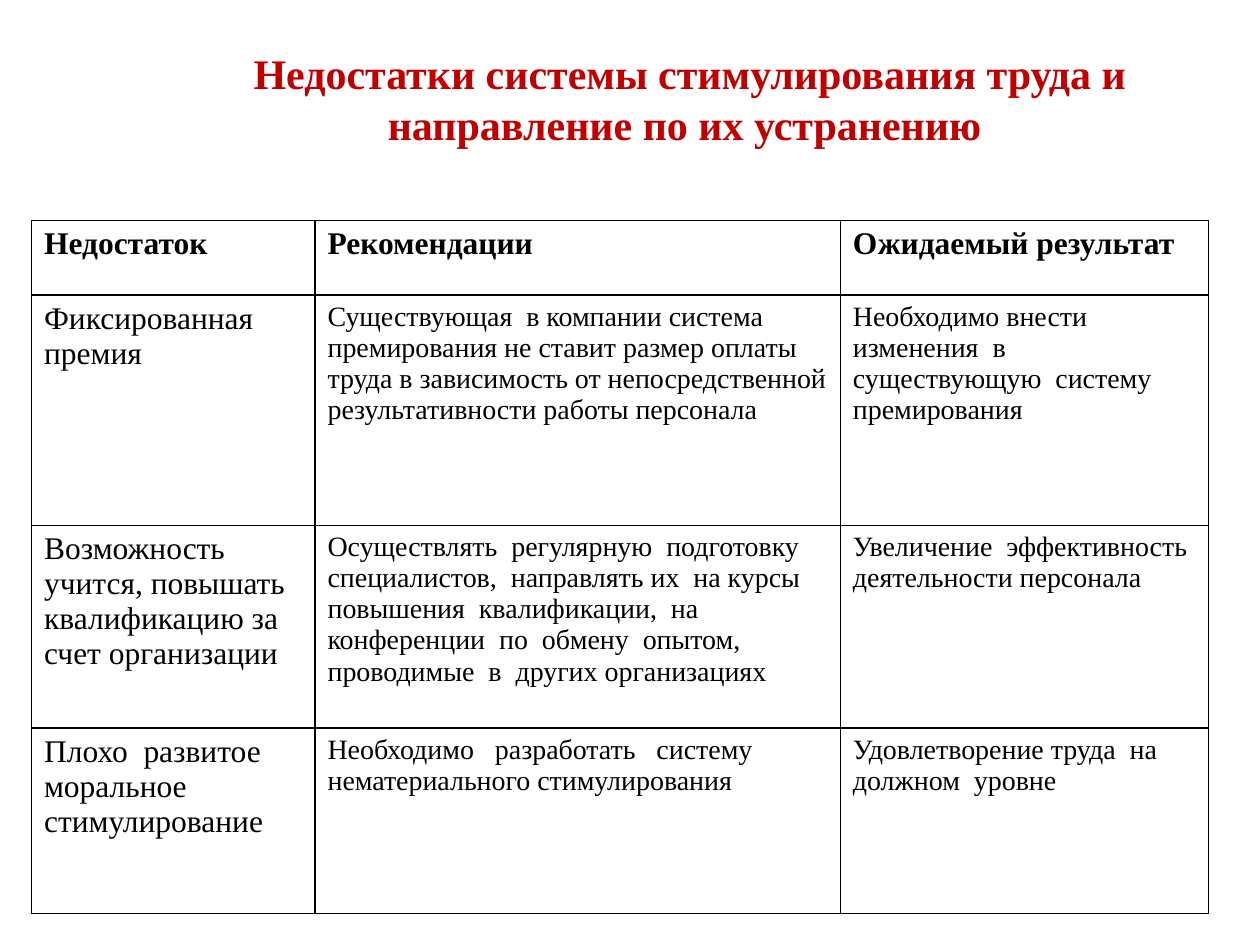
from lxml.etree import SubElement
from pptx import Presentation
from pptx.dml.color import RGBColor
from pptx.enum.text import PP_ALIGN
from pptx.oxml.ns import qn
from pptx.util import Inches, Pt

COLORS = {"title": "C00000", "text": "000000", "border": "000000"}

TITLE = ["Недостатки системы стимулирования труда и ",
         "направление по их устранению "]
COLUMN_WIDTHS = [2.25, 4.17, 2.92]
ROW_HEIGHTS = [0.59, 1.83, 1.61, 1.47]
ROWS = [
    ["Недостаток", "Рекомендации", "Ожидаемый результат"],
    ["Фиксированная премия",
     "Существующая  в компании система премирования не ставит размер оплаты "
     "труда в зависимость от непосредственной результативности работы персонала",
     "Необходимо внести  изменения  в  существующую  систему  премирования"],
    ["Возможность учится, повышать квалификацию за счет организации",
     "Осуществлять  регулярную  подготовку  специалистов,  направлять их  на курсы  "
     "повышения  квалификации,  на  конференции  по  обмену  опытом, "
     "проводимые  в  других организациях",
     "Увеличение  эффективность деятельности персонала"],
    ["Плохо  развитое  моральное  стимулирование",
     "Необходимо   разработать   систему   нематериального стимулирования",
     "Удовлетворение труда  на должном  уровне"],
]


class SlideBuilder:
    """Holds the text style and the current slide."""

    font_name = "Times New Roman"
    border_width = Pt(0.96)

    def __init__(self, slide):
        self.slide = slide

    def add_text(self, p, text, size, color, bold=False):
        r = p.add_run()
        r.text = text
        style = {"name": self.font_name, "size": Pt(size), "bold": bold}
        for key, value in style.items():
            setattr(r.font, key, value)
        r.font.color.rgb = RGBColor.from_string(COLORS[color])

    def title(self, lines, left, top, width, height):
        box = self.slide.shapes.add_textbox(
            Inches(left), Inches(top), Inches(width), Inches(height))
        tf = box.text_frame
        tf.word_wrap = False
        for i, line in enumerate(lines):
            p = tf.add_paragraph() if i else tf.paragraphs[0]
            p.alignment = PP_ALIGN.CENTER
            self.add_text(p, line, 24, "title", bold=True)

    def border(self, cell):
        tc_pr = cell._tc.get_or_add_tcPr()
        for side in ("a:lnL", "a:lnR", "a:lnT", "a:lnB"):
            ln = SubElement(tc_pr, qn(side), w=str(self.border_width))
            fill = SubElement(ln, qn("a:solidFill"))
            SubElement(fill, qn("a:srgbClr"), val=COLORS["border"])

    def table(self, rows, left, top, widths, heights):
        table = self.slide.shapes.add_table(
            len(rows), len(widths), Inches(left), Inches(top),
            Inches(sum(widths)), Inches(sum(heights))).table
        for column, width in zip(table.columns, widths):
            column.width = Inches(width)
        for row, height in zip(table.rows, heights):
            row.height = Inches(height)
        for i, texts in enumerate(rows):
            for j, text in enumerate(texts):
                cell = table.cell(i, j)
                self.border(cell)
                cell.fill.background()
                # Header row and first column are set larger
                size = 18 if i == 0 or j == 0 else 16
                self.add_text(cell.text_frame.paragraphs[0], text, size,
                              "text", bold=i == 0)


def main():
    prs = Presentation()
    prs.slide_width, prs.slide_height = Inches(10), Inches(7.5)
    s = SlideBuilder(prs.slides.add_slide(prs.slide_layouts[6]))

    # Heading
    s.title(TITLE, 1.88, 0.33, 7.19, 0.9)

    # Shortcomings, recommendations and results
    s.table(ROWS, 0.25, 1.75, COLUMN_WIDTHS, ROW_HEIGHTS)

    prs.save("out.pptx")


if __name__ == "__main__":
    main()
